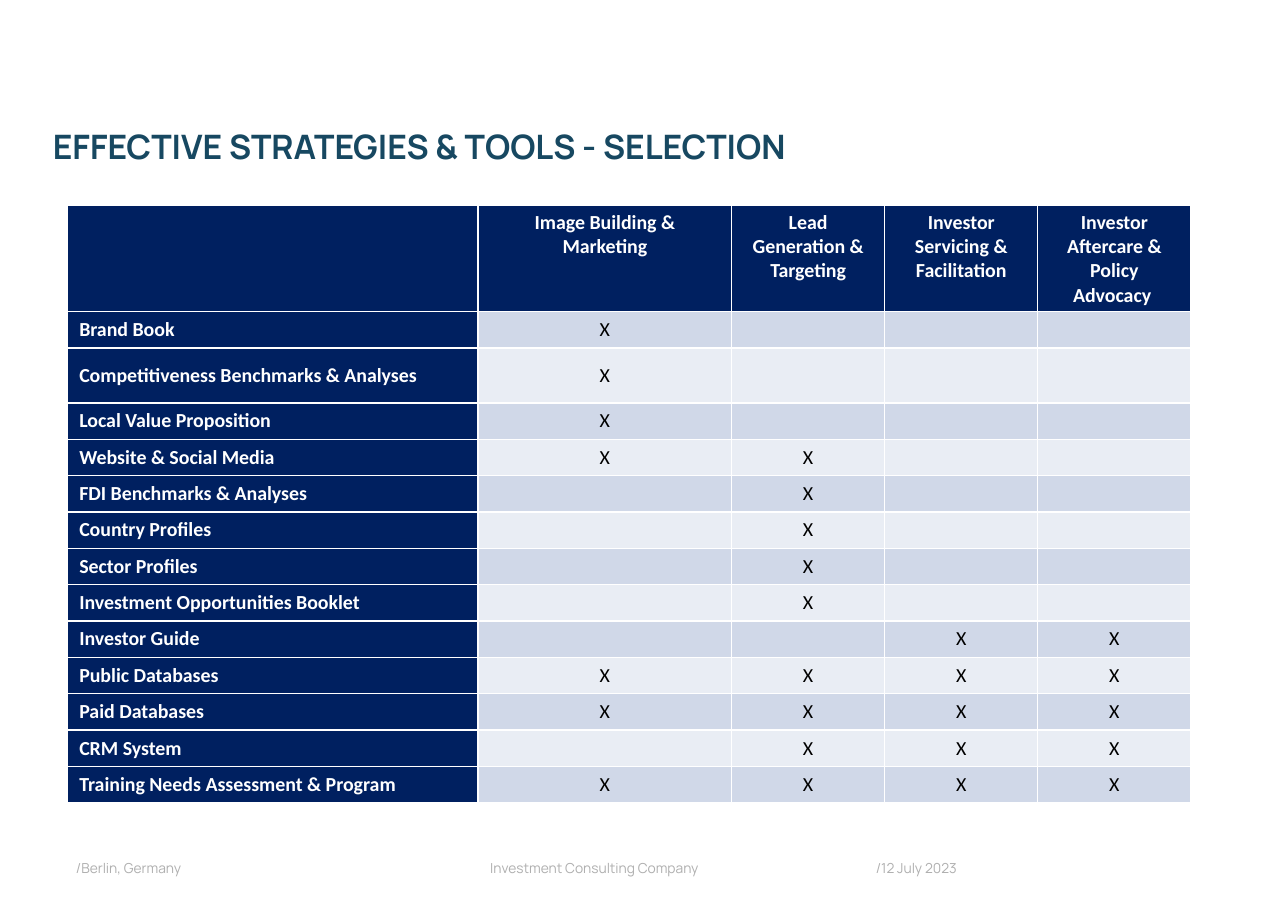
from lxml.etree import SubElement
from pptx import Presentation
from pptx.dml.color import RGBColor
from pptx.enum.text import MSO_ANCHOR, PP_ALIGN
from pptx.oxml.ns import qn
from pptx.util import Inches, Pt

COLORS = {"navy": "002060", "teal": "174861", "grey": "AFAFAF", "white": "FFFFFF",
          "black": "000000", "band_dark": "D0D8E8", "band_light": "E9EDF4"}
WIDTH, HEIGHT = 11.69, 8.27

TITLE_FONT = {"name": "Manrope", "size": Pt(22), "bold": True}
FOOTER_FONT = {"name": "Manrope", "size": Pt(9), "bold": False}
LABEL_FONT = {"name": "Calibri", "size": Pt(13), "bold": True}
MARK_FONT = {**LABEL_FONT, "bold": False}

HEADINGS = ["", "Image Building & Marketing", "Lead Generation & Targeting",
            "Investor Servicing & Facilitation", "Investor Aftercare & Policy Advocacy "]
# Each tool with one mark or gap for each of the four strategies
TOOLS = [
    ("Brand Book", "X---"),
    ("Competitiveness Benchmarks & Analyses", "X---"),
    ("Local Value Proposition", "X---"),
    ("Website & Social Media", "XX--"),
    ("FDI Benchmarks & Analyses", "-X--"),
    ("Country Profiles", "-X--"),
    ("Sector Profiles", "-X--"),
    ("Investment Opportunities Booklet", "-X--"),
    ("Investor Guide", "--XX"),
    ("Public Databases", "XXXX"),
    ("Paid Databases", "XXXX"),
    ("CRM System", "-XXX"),
    ("Training Needs Assessment & Program", "XXXX"),
]
COLUMN_WIDTHS = [3.73, 2.3, 1.39, 1.39, 1.39]
ROW_HEIGHTS = [0.95, 0.33, 0.5] + [0.33] * 11


def rgb(name):
    return RGBColor.from_string(COLORS[name])


def write(p, text, font, color):
    r = p.add_run()
    r.text = text
    for key, value in font.items():
        setattr(r.font, key, value)
    r.font.color.rgb = rgb(color)


def add_text(s, box, text, font, color):
    tf = s.shapes.add_textbox(*map(Inches, box)).text_frame
    tf.word_wrap = True
    for side in ("left", "top", "right", "bottom"):
        setattr(tf, f"margin_{side}", 0)
    write(tf.paragraphs[0], text, font, color)


def fill_cell(cell, text, fill, font, color, align, anchor):
    cell.fill.solid()
    cell.fill.fore_color.rgb = rgb(fill)
    cell.margin_left = cell.margin_right = Inches(0.11)
    cell.vertical_anchor = anchor
    p = cell.text_frame.paragraphs[0]
    p.alignment = align
    if text:
        write(p, text, font, color)
    else:
        # Keep the line of an empty cell as low as its row
        SubElement(p._p, qn("a:endParaRPr"), sz="1300")


def add_strategy_table(s, left, top):
    table = s.shapes.add_table(
        len(ROW_HEIGHTS), len(COLUMN_WIDTHS), Inches(left), Inches(top),
        Inches(sum(COLUMN_WIDTHS)), Inches(sum(ROW_HEIGHTS))).table
    for column, width in zip(table.columns, COLUMN_WIDTHS):
        column.width = Inches(width)
    for row, height in zip(table.rows, ROW_HEIGHTS):
        row.height = Inches(height)

    # Header row
    for col, heading in enumerate(HEADINGS):
        fill_cell(table.cell(0, col), heading, "navy", LABEL_FONT, "white",
                  PP_ALIGN.CENTER, MSO_ANCHOR.TOP)

    # Tool names and marks
    for row, (tool, marks) in enumerate(TOOLS, 1):
        fill_cell(table.cell(row, 0), tool, "navy", LABEL_FONT, "white",
                  PP_ALIGN.LEFT, MSO_ANCHOR.MIDDLE)
        band = "band_dark" if row % 2 else "band_light"
        for col, mark in enumerate(marks, 1):
            fill_cell(table.cell(row, col), mark.strip("-"), band, MARK_FONT, "black",
                      PP_ALIGN.CENTER, MSO_ANCHOR.MIDDLE)


def add_footer(s, top):
    for left, width, text in [(0.69, 1.2, "/Berlin, Germany"),
                              (4.45, 2.4, "Investment Consulting Company"),
                              (7.95, 1.9, "/12 July 2023")]:
        add_text(s, (left, top, width, 0.18), text, FOOTER_FONT, "grey")


def main():
    prs = Presentation()
    prs.slide_width, prs.slide_height = Inches(WIDTH), Inches(HEIGHT)
    s = prs.slides.add_slide(prs.slide_layouts[6])
    add_text(s, (0.48, 1.14, 8.37, 0.63), "EFFECTIVE STRATEGIES & TOOLS - SELECTION",
             TITLE_FONT, "teal")
    add_strategy_table(s, 0.61, 1.86)
    add_footer(s, 7.8)
    prs.save("out.pptx")


if __name__ == "__main__":
    main()
